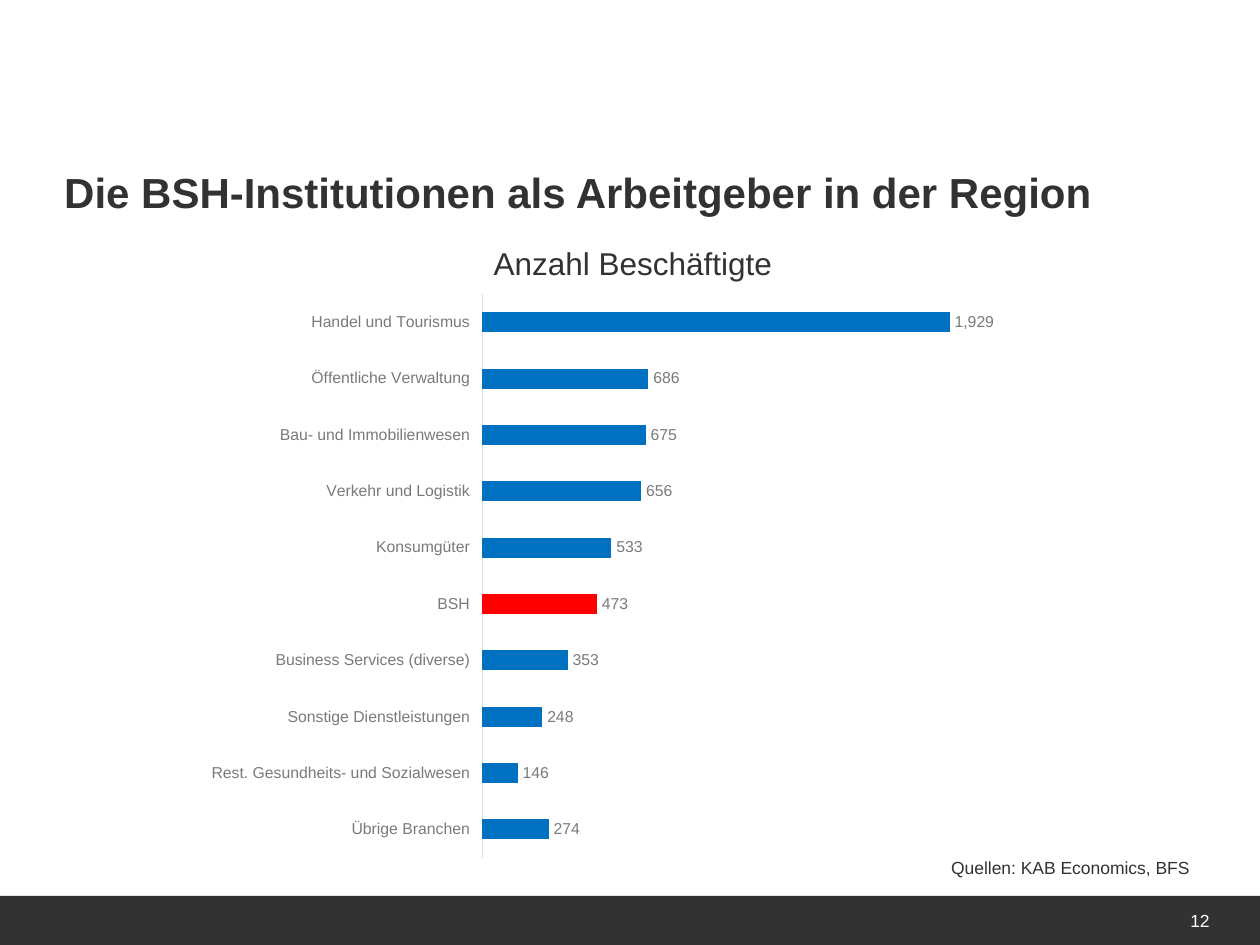
from lxml.etree import SubElement
from pptx import Presentation
from pptx.chart.data import CategoryChartData
from pptx.dml.color import RGBColor
from pptx.enum.chart import XL_CHART_TYPE, XL_LABEL_POSITION, XL_TICK_LABEL_POSITION, XL_TICK_MARK
from pptx.enum.shapes import MSO_SHAPE
from pptx.enum.text import MSO_ANCHOR, PP_ALIGN
from pptx.oxml.ns import qn
from pptx.util import Inches, Pt

DARK = RGBColor(0x32, 0x32, 0x32)
GREY = RGBColor(0x7A, 0x7A, 0x7A)
PALE = RGBColor(0xE0, 0xE0, 0xE0)
BLUE = RGBColor(0x00, 0x70, 0xC0)
RED = RGBColor(0xFF, 0x00, 0x00)
WHITE = RGBColor(0xFF, 0xFF, 0xFF)
FONT = "Arial"
HIGHLIGHT = "BSH"
EMPLOYEES = {
    "Übrige Branchen": 274,
    "Rest. Gesundheits- und Sozialwesen": 146,
    "Sonstige Dienstleistungen": 248,
    "Business Services (diverse)": 353,
    HIGHLIGHT: 473,
    "Konsumgüter": 533,
    "Verkehr und Logistik": 656,
    "Bau- und Immobilienwesen": 675,
    "Öffentliche Verwaltung": 686,
    "Handel und Tourismus": 1929,
}
PLOT_SHARES = {"x": 0.32, "y": 0.026, "w": 0.667, "h": 0.936}


def style_font(font, size, color, bold=False):
    """Set family, size, colour and weight of a font."""
    font.name, font.size, font.bold = FONT, Pt(size), bold
    font.color.rgb = color


def write(holder, text, size=10, color=DARK, bold=False,
          align=PP_ALIGN.LEFT, inset=(0.1, 0.05), spacing=None):
    """Fill a text holder with one formatted paragraph."""
    frame = holder.text_frame
    frame.word_wrap = True
    frame.vertical_anchor = MSO_ANCHOR.TOP
    frame.margin_left = frame.margin_right = Inches(inset[0])
    frame.margin_top = frame.margin_bottom = Inches(inset[1])
    frame.text = text
    paragraph = frame.paragraphs[0]
    paragraph.alignment, paragraph.line_spacing = align, spacing
    style_font(paragraph.runs[0].font, size, color, bold)


def add_label(slide, box, text, **style):
    """Add a text box at a place in inches."""
    write(slide.shapes.add_textbox(*map(Inches, box)), text, **style)


def add_title(slide, box, text, **style):
    """Place and fill the title placeholder."""
    title = slide.shapes.title
    title.left, title.top, title.width, title.height = map(Inches, box)
    write(title, text, **style)


def add_footer_band(slide, box):
    """Add the dark band along the foot of the slide."""
    band = slide.shapes.add_shape(MSO_SHAPE.RECTANGLE, *map(Inches, box))
    band.shadow.inherit = False
    band.fill.solid()
    band.fill.fore_color.rgb = DARK
    band.line.fill.background()


def set_plot_layout(chart, shares):
    """Fix the inner plot area as shares of the chart."""
    plot_area = chart.plots[0]._element.getparent()
    for old_layout in plot_area.findall(qn("c:layout")):
        plot_area.remove(old_layout)
    layout = SubElement(plot_area, qn("c:layout"))
    plot_area.insert(0, layout)
    manual = SubElement(layout, qn("c:manualLayout"))
    settings = {"layoutTarget": "inner", "xMode": "edge", "yMode": "edge", **shares}
    for name, value in settings.items():
        SubElement(manual, qn(f"c:{name}")).set("val", str(value))


def style_axes(chart):
    """Show plain category names and hide the value axis."""
    categories, values = chart.category_axis, chart.value_axis
    categories.major_tick_mark = categories.minor_tick_mark = XL_TICK_MARK.NONE
    categories.tick_label_position = XL_TICK_LABEL_POSITION.LOW
    categories.format.line.color.rgb = PALE
    categories.format.line.width = Pt(0.75)
    style_font(categories.tick_labels.font, 9, GREY)
    values.has_major_gridlines = False
    values.minimum_scale, values.maximum_scale = 0, 2500
    values.visible = False


def add_employee_chart(slide, box):
    """Add the bar chart of employees with one bar highlighted."""
    data = CategoryChartData(number_format="0")
    data.categories = list(EMPLOYEES)
    data.add_series("Series 1", EMPLOYEES.values())
    chart = slide.shapes.add_chart(
        XL_CHART_TYPE.BAR_CLUSTERED, *map(Inches, box), data).chart
    chart.has_legend = chart.has_title = False
    style_font(chart.font, 10, DARK)
    set_plot_layout(chart, PLOT_SHARES)
    style_axes(chart)

    plot = chart.plots[0]
    plot.gap_width, plot.vary_by_categories = 182, False
    bars = plot.series[0]
    bars.invert_if_negative = False
    highlighted = bars.points[list(EMPLOYEES).index(HIGHLIGHT)]
    for part, color in ((bars, BLUE), (highlighted, RED)):
        part.format.fill.solid()
        part.format.fill.fore_color.rgb = color

    labels = bars.data_labels
    labels.show_value = True
    labels.position = XL_LABEL_POSITION.OUTSIDE_END
    labels.number_format, labels.number_format_is_linked = "#,##0", False
    style_font(labels.font, 9, GREY)


def main():
    """Build and save the slide."""
    deck = Presentation()
    deck.slide_width, deck.slide_height = Inches(10), Inches(7.5)
    slide = deck.slides.add_slide(deck.slide_layouts[5])
    add_footer_band(slide, (0, 7.11, 10, 0.39))
    add_label(slide, (9.21, 7.22, 0.39, 0.2), "12", color=WHITE,
              align=PP_ALIGN.RIGHT, inset=(0, 0))
    add_title(slide, (0.41, 1.32, 9, 0.74),
              "Die BSH-Institutionen als Arbeitgeber in der Region",
              size=24, bold=True, spacing=0.9)
    add_label(slide, (3.82, 1.89, 4.37, 0.39), "Anzahl Beschäftigte", size=18)
    add_label(slide, (7.45, 6.75, 2.16, 0.26), "Quellen: KAB Economics, BFS")
    add_employee_chart(slide, (1.52, 2.21, 7.21, 4.78))
    deck.save("out.pptx")


if __name__ == "__main__":
    main()
